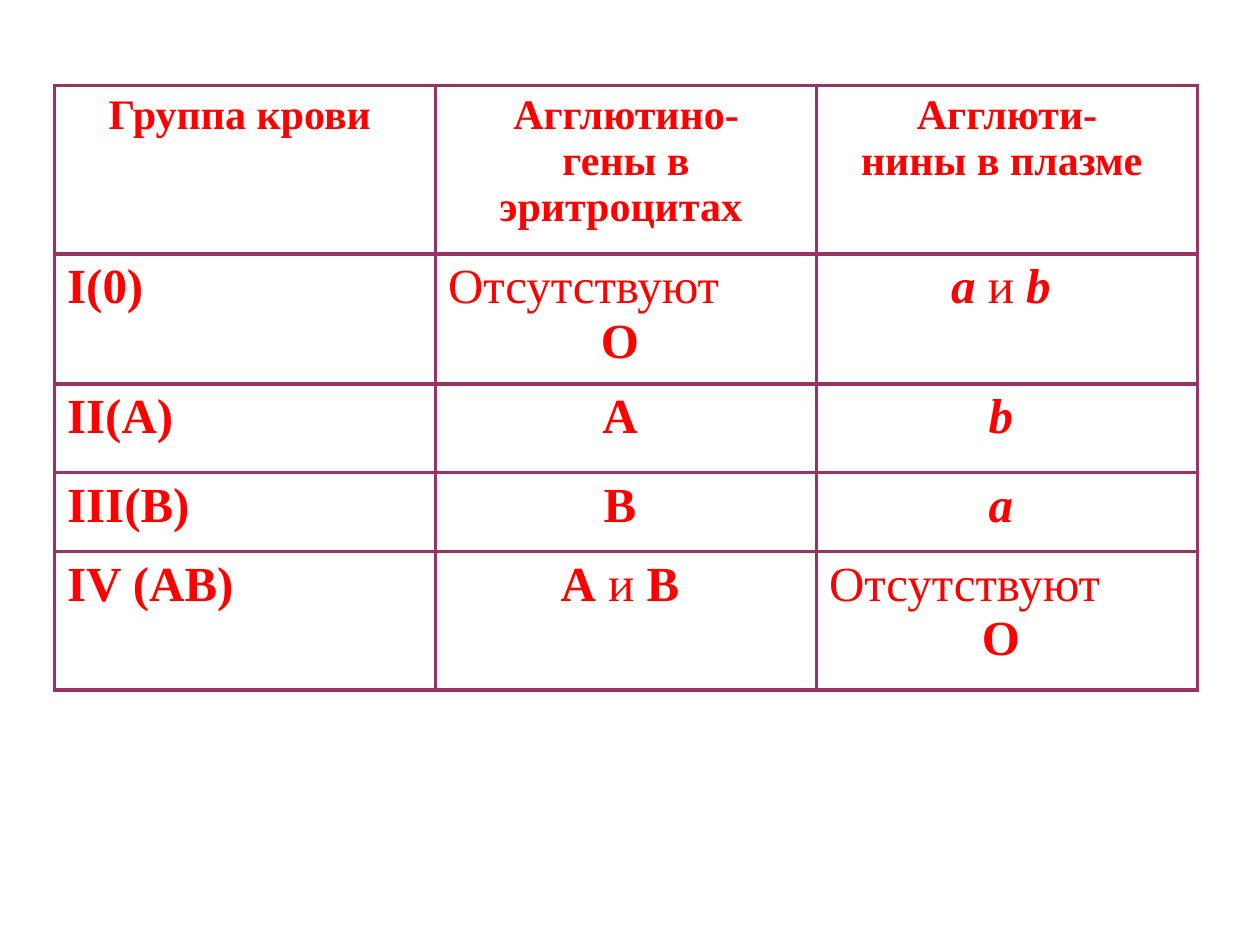
from lxml.etree import SubElement
from pptx import Presentation
from pptx.dml.color import RGBColor
from pptx.enum.text import PP_ALIGN as Align
from pptx.oxml.ns import qn
from pptx.util import Cm, Pt

RED, PLUM = "FF0000", "993366"
FONT = "Times New Roman"
MID, JUST = Align.CENTER, Align.JUSTIFY

NONE = [(JUST, [("Отсутствуют", "")]), (MID, [("О ", "b")])]


def mid(*runs):
    return [(MID, list(runs))]


def group(name):
    return [(JUST, [(name, "b")])]


HEAD = [
    mid(("Группа крови ", "b")),
    mid(("Агглютино-", "b")) + mid(("гены в эритроцитах ", "b")),
    mid(("Агглюти-", "b")) + mid(("нины в плазме ", "b")),
]
BODY = [
    [group("I(0) "), NONE, mid(("а", "bi"), (" и ", ""), ("b ", "bi"))],
    [group("II(А) "), mid(("А ", "b")), mid(("b ", "bi"))],
    [group("III(В) "), mid(("В ", "b")), mid(("а ", "bi"))],
    [group("IV (АВ) "), mid(("А", "b"), (" и ", ""), ("В ", "b")), NONE],
]
ROWS = [HEAD] + BODY
HIGH = [3.4, 2.62, 1.78, 1.6, 2.79]
WIDE = 7.68


def color(code):
    return RGBColor.from_string(code)


def border(cell):
    props = cell._tc.get_or_add_tcPr()
    for side in ("a:lnL", "a:lnR", "a:lnT", "a:lnB"):
        line = SubElement(props, qn(side), w=str(Pt(2.25)))
        fill = SubElement(line, qn("a:solidFill"))
        SubElement(fill, qn("a:srgbClr"), val=PLUM)


def write(cell, paras, size):
    frame = cell.text_frame
    for n, (align, runs) in enumerate(paras):
        para = frame.add_paragraph() if n else frame.paragraphs[0]
        para.alignment = align
        for text, style in runs:
            run = para.add_run()
            run.text = text
            font = run.font
            font.name, font.size = FONT, Pt(size)
            font.bold, font.italic = "b" in style, "i" in style
            font.color.rgb = color(RED)


def main():
    deck = Presentation()
    deck.slide_width, deck.slide_height = Cm(25.4), Cm(19.05)
    slide = deck.slides.add_slide(deck.slide_layouts[6])
    cols = len(HEAD)
    table = slide.shapes.add_table(
        len(ROWS), cols, Cm(1.1), Cm(1.72), Cm(WIDE * cols), Cm(sum(HIGH))
    ).table
    table.first_row = table.horz_banding = False
    for col in table.columns:
        col.width = Cm(WIDE)
    for r, (cells, high) in enumerate(zip(ROWS, HIGH)):
        table.rows[r].height = Cm(high)
        for c, paras in enumerate(cells):
            cell = table.cell(r, c)
            border(cell)
            cell.fill.background()
            write(cell, paras, 28 if r else 24)
    deck.save("out.pptx")


if __name__ == "__main__":
    main()
